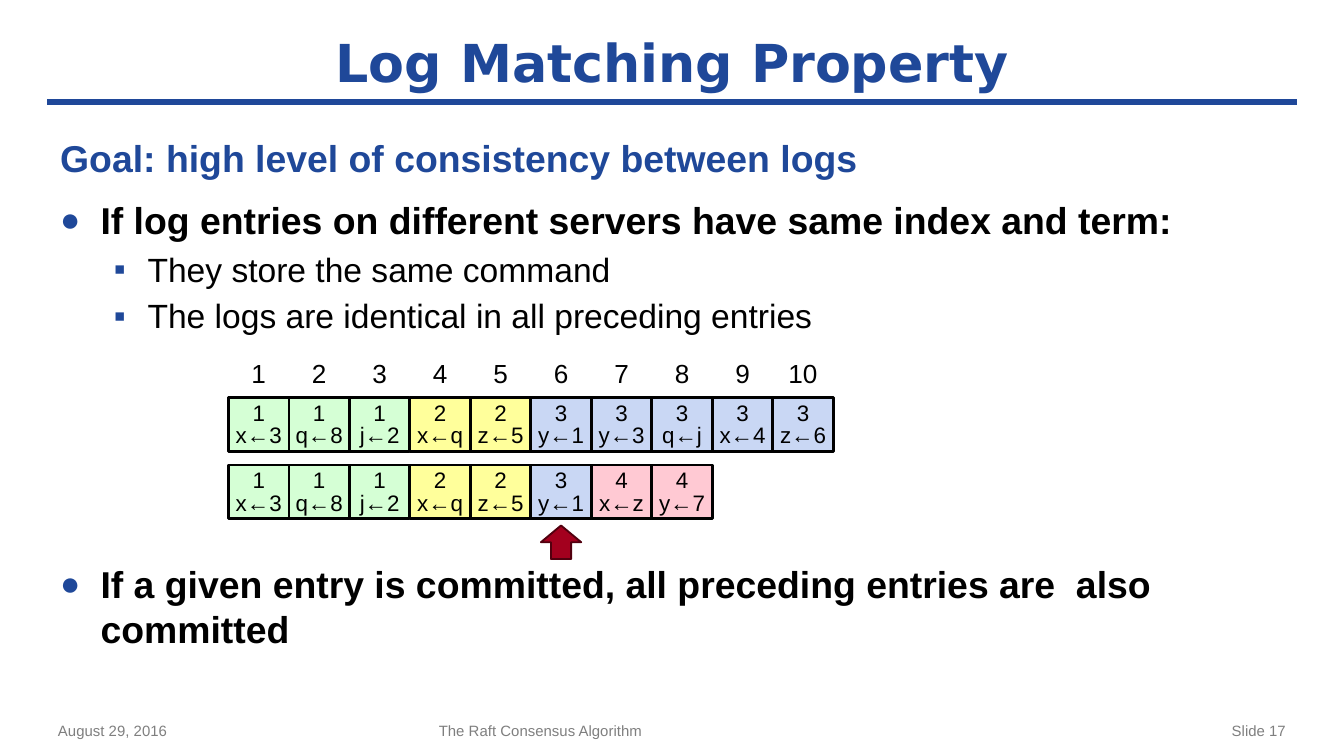
from dataclasses import dataclass

from lxml.etree import SubElement
from pptx import Presentation
from pptx.dml.color import RGBColor
from pptx.enum.shapes import MSO_CONNECTOR as Connector, MSO_SHAPE as Shape
from pptx.enum.text import MSO_ANCHOR as Anchor, PP_ALIGN as Align
from pptx.oxml.ns import qn
from pptx.util import Pt

BLUE, BLACK, GRAY = "1F4899", "000000", "7F7F7F"
TERM_FILLS = {1: "D5FFD5", 2: "FFFF9B", 3: "C9D7F4", 4: "FFC9D3"}
LOG_LEFT, ENTRY_WIDTH, ENTRY_HEIGHT = 122.4, 32.4, 28.8
INDEX_TOP, MARKED_INDEX = 191.5, 6


@dataclass
class Entry:
    term: int
    command: str


@dataclass
class Log:
    top: float
    entries: list[Entry]


@dataclass
class Bullet:
    char: str
    indent: float
    hanging: float
    percent: int = 100
    level: int = 0


@dataclass
class Point:
    text: str
    size: float
    bold: bool
    color: str
    before: float
    bullet: Bullet | None = None


@dataclass
class Label:
    text: str
    left: float
    top: float
    width: float
    height: float
    size: float
    color: str
    align: Align = Align.LEFT
    font: str = "Arial"
    bold: bool = False
    inset: bool = True
    anchor: Anchor = Anchor.MIDDLE


MAIN = Bullet("●", 21.6, 21.6, percent=90)
SUB = Bullet("▪", 46.8, 18, level=1)

POINTS = [
    Point("Goal: high level of consistency between logs", 20, True, BLUE, 9),
    Point("If log entries on different servers have same index and term:",
          20, True, BLACK, 9, MAIN),
    Point("They store the same command", 18, False, BLACK, 3.5, SUB),
    Point("The logs are identical in all preceding entries", 18, False, BLACK, 3.5, SUB),
    # The wide gap leaves room for the logs
    Point("If a given entry is committed, all preceding entries are  also committed",
          20, True, BLACK, 121, MAIN),
]

SHARED = [Entry(1, "x←3"), Entry(1, "q←8"), Entry(1, "j←2"),
          Entry(2, "x←q"), Entry(2, "z←5"), Entry(3, "y←1")]
LOGS = [
    Log(213.1, SHARED + [Entry(3, "y←3"), Entry(3, "q←j"), Entry(3, "x←4"), Entry(3, "z←6")]),
    Log(249.1, SHARED + [Entry(4, "x←z"), Entry(4, "y←7")]),
]

LABELS = [
    Label("August 29, 2016", 24, 383, 180, 17.3, 8, GRAY),
    Label("The Raft Consensus Algorithm", 228, 383, 270, 17.3, 8, GRAY),
    Label("Slide 17", 516, 383, 180, 17.3, 8, GRAY, Align.RIGHT),
    Label("Log Matching Property", 24, 11.5, 672, 43.2, 28, BLUE, Align.CENTER,
          font="DejaVu Sans", bold=True),
]


def rgb(color: str) -> RGBColor:
    return RGBColor.from_string(color)


def add_text(paragraph, text: str, size: float, color: str,
             font: str = "Arial", bold: bool = False) -> None:
    run = paragraph.add_run()
    run.text = text
    run.font.name, run.font.size, run.font.bold = font, Pt(size), bold
    run.font.color.rgb = rgb(color)


def clear_insets(frame, top: float = 0) -> None:
    frame.margin_left = frame.margin_right = frame.margin_bottom = Pt(0)
    frame.margin_top = Pt(top)


def draw_label(shapes, label: Label) -> None:
    box = shapes.add_textbox(Pt(label.left), Pt(label.top), Pt(label.width), Pt(label.height))
    frame = box.text_frame
    frame.word_wrap, frame.vertical_anchor = True, label.anchor
    if not label.inset:
        clear_insets(frame)
    paragraph = frame.paragraphs[0]
    paragraph.alignment = label.align
    add_text(paragraph, label.text, label.size, label.color, label.font, label.bold)


def set_bullet(paragraph, bullet: Bullet) -> None:
    paragraph.level = bullet.level
    props = paragraph._p.get_or_add_pPr()
    props.set("marL", str(Pt(bullet.indent)))
    props.set("indent", str(-Pt(bullet.hanging)))
    SubElement(SubElement(props, qn("a:buClr")), qn("a:srgbClr"), val=BLUE)
    SubElement(props, qn("a:buSzPct"), val=str(bullet.percent * 1000))
    SubElement(props, qn("a:buFont"), typeface="Arial")
    SubElement(props, qn("a:buChar"), char=bullet.char)


def draw_points(shapes, points: list[Point]) -> None:
    frame = shapes.add_textbox(Pt(25.2), Pt(69.1), Pt(669.6), Pt(295.2)).text_frame
    frame.word_wrap = True
    for number, point in enumerate(points):
        paragraph = frame.add_paragraph() if number else frame.paragraphs[0]
        paragraph.space_before = Pt(point.before)
        if point.bullet:
            set_bullet(paragraph, point.bullet)
        add_text(paragraph, point.text, point.size, point.color, bold=point.bold)


def draw_shape(shapes, kind: Shape, left: float, top: float, width: float, height: float,
               fill: str, line: str, weight: float):
    shape = shapes.add_shape(kind, Pt(left), Pt(top), Pt(width), Pt(height))
    shape.shadow.inherit = False
    shape.fill.solid()
    shape.fill.fore_color.rgb = rgb(fill)
    shape.line.color.rgb = rgb(line)
    shape.line.width = Pt(weight)
    return shape


def entry_left(index: int) -> float:
    return LOG_LEFT + (index - 1) * ENTRY_WIDTH


def draw_log(shapes, log: Log) -> None:
    for index, entry in enumerate(log.entries, start=1):
        cell = draw_shape(shapes, Shape.RECTANGLE, entry_left(index), log.top,
                          ENTRY_WIDTH, ENTRY_HEIGHT, TERM_FILLS[entry.term], BLACK, 1.5)
        frame = cell.text_frame
        frame.vertical_anchor = Anchor.MIDDLE
        clear_insets(frame, top=1.44)
        paragraph = frame.paragraphs[0]
        paragraph.alignment, paragraph.line_spacing = Align.CENTER, Pt(12)
        add_text(paragraph, str(entry.term), 12, BLACK)
        paragraph.add_line_break()
        add_text(paragraph, entry.command, 12, BLACK)


def draw_rule(shapes) -> None:
    rule = shapes.add_connector(Connector.STRAIGHT, Pt(25.2), Pt(54.7), Pt(694.8), Pt(54.7))
    rule.line.color.rgb = rgb(BLUE)
    rule.line.width = Pt(3.5)
    SubElement(rule._element.spPr, qn("a:effectLst"))


def main() -> None:
    deck = Presentation()
    deck.slide_width, deck.slide_height = Pt(720), Pt(405)
    shapes = deck.slides.add_slide(deck.slide_layouts[6]).shapes

    # Title, footer and main points
    draw_rule(shapes)
    for label in LABELS:
        draw_label(shapes, label)
    draw_points(shapes, POINTS)

    # Index numbers above the logs
    for index in range(1, len(LOGS[0].entries) + 1):
        draw_label(shapes, Label(str(index), entry_left(index), INDEX_TOP, ENTRY_WIDTH, 17.3,
                                 14, BLACK, Align.CENTER, inset=False, anchor=Anchor.TOP))

    # Logs, with an arrow at the last matching entry
    for log in LOGS:
        draw_log(shapes, log)
    arrow_width = 21.6
    arrow_left = entry_left(MARKED_INDEX) + (ENTRY_WIDTH - arrow_width) / 2
    draw_shape(shapes, Shape.UP_ARROW, arrow_left, 281.5, arrow_width, 18, "A3001E", "52000F", 1)

    deck.save("out.pptx")


if __name__ == "__main__":
    main()
